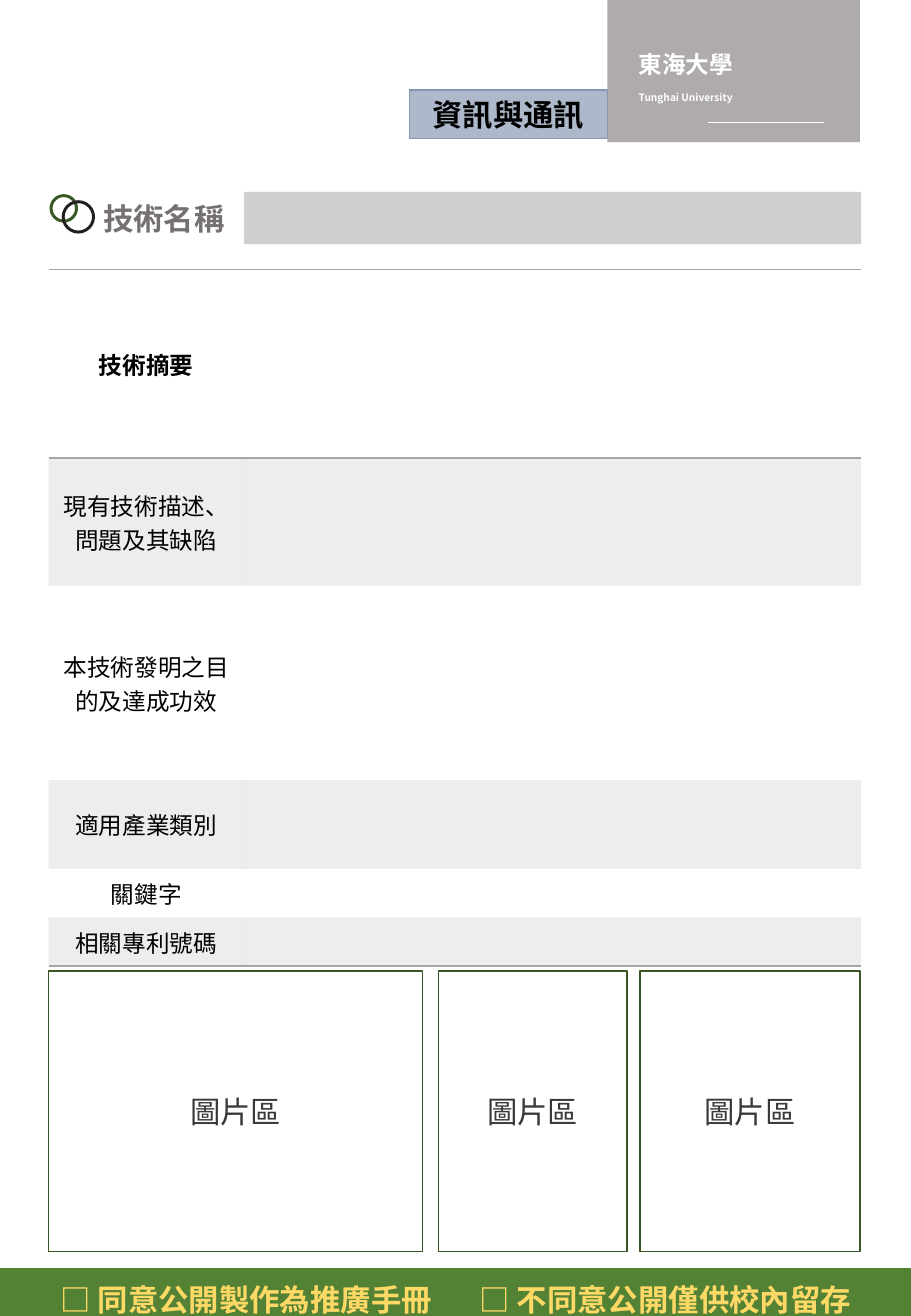
from lxml.etree import SubElement
from pptx import Presentation
from pptx.dml.color import RGBColor
from pptx.enum.shapes import MSO_CONNECTOR as Connector, MSO_SHAPE as Shape
from pptx.enum.text import MSO_ANCHOR as Anchor, MSO_AUTO_SIZE as AutoSize, PP_ALIGN as Align
from pptx.oxml import parse_xml
from pptx.oxml.ns import nsdecls, qn
from pptx.util import Inches, Pt

COLORS = {
    "white": "FFFFFF", "black": "000000", "header": "AFABAB", "footer": "548235",
    "green": "385723", "ink": "221F20", "title": "767171", "field": "D0CECE",
    "rule": "A5A5A5", "photo": "3B3838", "tag": "ADB9CA", "tag_line": "8497B0",
    "yellow": "FFD966",
}
CJK_FONT = "Noto Sans CJK SC"
LEFT = 0.4
LABEL_WIDTH, FIELD_WIDTH = 1.61, 5.08
ROWS = [
    ("技術摘要", 1.55),
    ("現有技術描述、問題及其缺陷", 1.05),
    ("本技術發明之目的及達成功效", 1.6),
    ("適用產業類別", 0.73),
    ("關鍵字", 0.33),
    ("相關專利號碼", 0.33),
]
PHOTOS = [(0.4, 3.08), (3.61, 1.55), (5.27, 1.81)]


def rgb(name):
    return RGBColor.from_string(COLORS[name])


def write(frame, text, size, color, bold=False, align=Align.LEFT, font=CJK_FONT):
    para = frame.paragraphs[0]
    para.alignment = align
    span = para.add_run()
    span.text = text
    span.font.size = Pt(size)
    span.font.bold = bold
    span.font.name = font
    span.font.color.rgb = rgb(color)
    if font == CJK_FONT:
        SubElement(span.font._element, qn("a:ea")).set("typeface", font)
    return para


def add_figure(shapes, kind, place, fill=None, line=None, weight=1):
    """Add a flat preset shape, with fill and line only where named."""
    figure = shapes.add_shape(kind, *map(Inches, place))
    figure.shadow.inherit = False
    if fill:
        figure.fill.solid()
        figure.fill.fore_color.rgb = rgb(fill)
    else:
        figure.fill.background()
    if line:
        figure.line.color.rgb = rgb(line)
        figure.line.width = Pt(weight)
    else:
        figure.line.fill.background()
    return figure


def add_text(page, place, *args, **kwargs):
    box = page.shapes.add_textbox(*map(Inches, place))
    box.text_frame.word_wrap = True
    return write(box.text_frame, *args, **kwargs)


def add_header(page):
    add_figure(page.shapes, Shape.RECTANGLE, (5, 0, 2.08, 1.17), "header")
    rule = page.shapes.add_connector(
        Connector.STRAIGHT, Inches(5.83), Inches(1.01), Inches(6.78), Inches(1.01))
    rule.line.color.rgb = rgb("white")
    rule.line.width = Pt(0.5)
    SubElement(rule._element.spPr, qn("a:effectLst"))
    tag = add_figure(page.shapes, Shape.RECTANGLE, (3.37, 0.74, 1.63, 0.4),
                     "tag", "tag_line", 0.75)
    write(tag.text_frame, "資訊與通訊", 18, "black", True, Align.CENTER)
    add_text(page, (5.16, 0.36, 1.75, 0.34), "東海大學", 14, "white", True, Align.JUSTIFY)
    add_text(page, (5.16, 0.7, 1.72, 0.2), "Tunghai University", 6, "white", True,
             Align.JUSTIFY)


def add_title(page):
    rings = page.shapes.add_group_shape().shapes
    add_figure(rings, Shape.OVAL, (0.42, 1.61, 0.21, 0.21), line="green", weight=1.75)
    add_figure(rings, Shape.OVAL, (0.52, 1.66, 0.25, 0.25), line="ink", weight=1.75)
    title = page.shapes.title
    title.left, title.top, title.width, title.height = map(Inches, (0.75, 1.6, 1.21, 0.4))
    frame = title.text_frame
    frame.auto_size = AutoSize.NONE
    frame.word_wrap = False
    frame.vertical_anchor = Anchor.TOP
    write(frame, "技術名稱", 18, "title", True)
    add_figure(page.shapes, Shape.RECTANGLE,
               (LEFT + LABEL_WIDTH, 1.58, FIELD_WIDTH, 0.43), "field")


def add_border(cell, side):
    cell._tc.get_or_add_tcPr().insert(0, parse_xml(
        f'<a:{side} {nsdecls("a")} w="12700"><a:solidFill>'
        f'<a:srgbClr val="{COLORS["rule"]}"/></a:solidFill></a:{side}>'))


def shade(cell):
    """Fill a cell with the rule colour at 20% opacity."""
    cell.fill.solid()
    cell.fill.fore_color.rgb = rgb("rule")
    tint = cell._tc.tcPr.find(".//" + qn("a:srgbClr"))
    SubElement(tint, qn("a:alpha")).set("val", "20000")


def add_form(page):
    widths = (LABEL_WIDTH, FIELD_WIDTH)
    table = page.shapes.add_table(
        len(ROWS), len(widths), Inches(LEFT), Inches(2.22), Inches(sum(widths)),
        Inches(sum(height for _, height in ROWS))).table
    table.first_row = table.horz_banding = False
    plain_style = "{2D5ABB26-0587-4C30-8999-92F81FD0307C}"
    table._tbl.tblPr.find(qn("a:tableStyleId")).text = plain_style
    for column, width in zip(table.columns, widths):
        column.width = Inches(width)
    for index, (label, height) in enumerate(ROWS):
        table.rows[index].height = Inches(height)
        for cell in table.rows[index].cells:
            if index % 2:
                shade(cell)
            else:
                cell.fill.background()
            if index in (0, len(ROWS) - 1):
                add_border(cell, "lnB")
            if index == 0:
                add_border(cell, "lnT")
        label_cell = table.cell(index, 0)
        label_cell.vertical_anchor = Anchor.MIDDLE
        write(label_cell.text_frame, label, 14, "black", index == 0, Align.CENTER)


def add_photo_areas(page):
    for left, width in PHOTOS:
        area = add_figure(page.shapes, Shape.RECTANGLE, (left, 7.99, width, 2.31),
                          "white", "green")
        write(area.text_frame, "圖片區", 18, "photo", align=Align.CENTER)


def add_consent_bar(page):
    add_figure(page.shapes, Shape.RECTANGLE, (0, 10.44, 7.5, 0.39), "footer", "footer")
    para = add_text(page, (LEFT, 10.49, 6.86, 0.4),
                    "□ 同意公開製作為推廣手冊\t□ 不同意公開僅供校內留存",
                    18, "yellow", True, font="Calibri")
    tabs = SubElement(para._p.get_or_add_pPr(), qn("a:tabLst"))
    stop = SubElement(tabs, qn("a:tab"))
    stop.set("pos", str(Inches(3.45)))
    stop.set("algn", "l")


def main():
    deck = Presentation()
    deck.slide_width, deck.slide_height = Inches(7.5), Inches(10.83)
    page = deck.slides.add_slide(deck.slide_layouts.get_by_name("Title Only"))
    add_header(page)
    add_title(page)
    add_form(page)
    add_photo_areas(page)
    add_consent_bar(page)
    deck.save("out.pptx")


if __name__ == "__main__":
    main()
